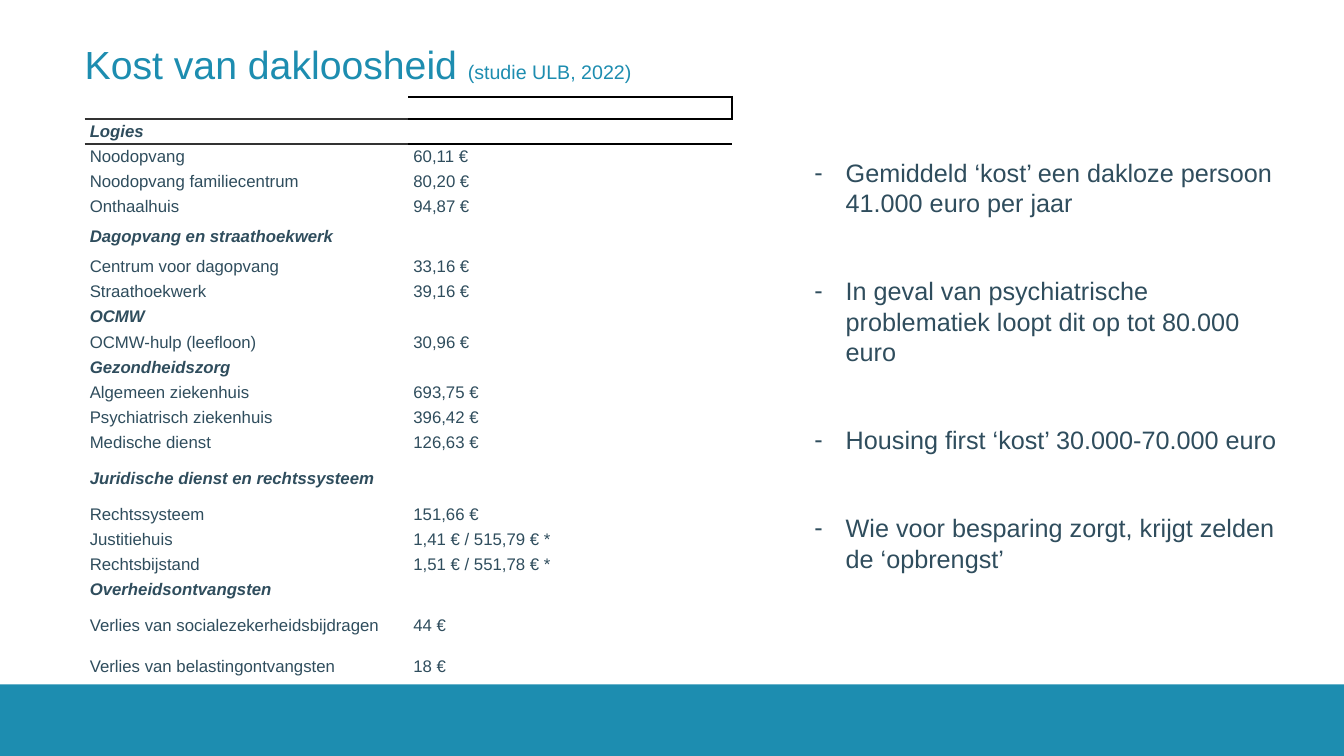
from typing import NamedTuple

from lxml.etree import SubElement as Sub
from pptx import Presentation
from pptx.dml.color import RGBColor as RGB
from pptx.enum.shapes import MSO_SHAPE as Shape
from pptx.enum.text import MSO_ANCHOR as Anchor
from pptx.oxml.ns import qn
from pptx.util import Pt

PX = 9144  # 100 px to the inch
FONT = "Arial"
HEX = {"teal": "1D8DB0", "slate": "2F4D5D", "rule": "333333", "black": "000000"}
PLAIN = "{2D5ABB26-0587-4C30-8999-92F81FD0307C}"  # table style without grid


class Box(NamedTuple):
    x: int
    y: int
    w: int
    h: int

    def emu(self) -> list[int]:
        return [n * PX for n in self]


class Row(NamedTuple):
    label: str
    cost: str = ""  # a row without cost is a heading
    high: int = 25


class Edge(NamedTuple):
    row: int
    col: int
    side: str
    tint: str
    width: float


ROWS = [
    Row("", high=22),
    Row("Logies"),
    Row("Noodopvang", "60,11 €"),
    Row("Noodopvang familiecentrum", "80,20 €"),
    Row("Onthaalhuis", "94,87 €"),
    Row("Dagopvang en straathoekwerk", high=34),
    Row("Centrum voor dagopvang", "33,16 €"),
    Row("Straathoekwerk", "39,16 €"),
    Row("OCMW"),
    Row("OCMW-hulp (leefloon)", "30,96 €"),
    Row("Gezondheidszorg"),
    Row("Algemeen ziekenhuis", "693,75 €"),
    Row("Psychiatrisch ziekenhuis", "396,42 €"),
    Row("Medische dienst", "126,63 €"),
    Row("Juridische dienst en rechtssysteem", high=46),
    Row("Rechtssysteem", "151,66 €"),
    Row("Justitiehuis", "1,41 € / 515,79 € *"),
    Row("Rechtsbijstand", "1,51 € / 551,78 € *"),
    Row("Overheidsontvangsten"),
    Row("Verlies van socialezekerheidsbijdragen", "44 €", 46),
    Row("Verlies van belastingontvangsten", "18 €", 34),
]
EDGES = [
    Edge(0, 0, "B", "rule", 1.5),
    Edge(1, 0, "T", "rule", 1.5),
    Edge(0, 1, "R", "black", 1),
    Edge(0, 1, "T", "black", 1.5),
    Edge(0, 1, "B", "black", 1.5),
    Edge(1, 1, "T", "black", 1.5),
]
POINTS = [
    "Gemiddeld ‘kost’ een dakloze persoon 41.000 euro per jaar",
    "In geval van psychiatrische problematiek loopt dit op tot 80.000 euro",
    "Housing first ‘kost’ 30.000-70.000 euro",
    "Wie voor besparing zorgt, krijgt zelden de ‘opbrengst’",
]


def put(item, **form) -> None:
    for key, val in form.items():
        setattr(item, key, val)


def write(para, text: str, size: float, tint: str, **form) -> None:
    run = para.add_run()
    run.text = text
    put(run.font, name=FONT, size=Pt(size), **form)
    run.font.color.rgb = RGB.from_string(HEX[tint])


def frame(slide, box: Box, **form):
    body = slide.shapes.add_textbox(*box.emu()).text_frame
    put(body, word_wrap=True, **form)
    return body


def rule(cell, edge: Edge) -> None:
    prop = cell._tc.get_or_add_tcPr()
    line = Sub(prop, qn(f"a:ln{edge.side}"), w=str(Pt(edge.width)))
    fill = Sub(line, qn("a:solidFill"))
    Sub(fill, qn("a:srgbClr"), val=HEX[edge.tint])


def band(slide) -> None:
    bar = slide.shapes.add_shape(Shape.RECTANGLE, *Box(0, 679, 1333, 71).emu())
    bar.shadow.inherit = False
    bar.fill.solid()
    bar.fill.fore_color.rgb = RGB.from_string(HEX["teal"])
    bar.line.fill.background()


def costs(slide) -> None:
    area = Box(84, 96, 642, sum(row.high for row in ROWS))
    grid = slide.shapes.add_table(len(ROWS), 2, *area.emu()).table
    put(grid, first_row=False, horz_banding=False)
    grid._tbl.tblPr.find(qn("a:tableStyleId")).text = PLAIN
    # Borders come before the fill in a cell's properties
    for edge in EDGES:
        rule(grid.cell(edge.row, edge.col), edge)
    for at, row in enumerate(ROWS):
        grid.rows[at].height = row.high * PX
        head = not row.cost
        for col, text in enumerate((row.label, row.cost)):
            cell = grid.cell(at, col)
            put(cell, vertical_anchor=Anchor.MIDDLE,
                margin_left=5 * PX, margin_right=5 * PX,
                margin_top=3 * PX, margin_bottom=3 * PX)
            cell.fill.background()
            para = cell.text_frame.paragraphs[0]
            if text:
                write(para, text, 12, "slate", bold=head, italic=head)
            else:  # keeps an empty cell from stretching its row
                Sub(para._p, qn("a:endParaRPr"), sz="900")


def title(slide) -> None:
    body = frame(slide, Box(84, 0, 1165, 126), vertical_anchor=Anchor.MIDDLE,
                 margin_left=0, margin_right=0, margin_top=0, margin_bottom=0)
    para = body.paragraphs[0]
    write(para, "Kost van dakloosheid ", 28, "teal")
    write(para, "(studie ULB, 2022)", 14, "teal")


def points(slide) -> None:
    body = frame(slide, Box(798, 122, 486, 525), margin_top=34 * PX)
    for at, text in enumerate(POINTS):
        para = body.add_paragraph() if at else body.paragraphs[0]
        if at:
            para.space_before = Pt(41.4)
        prop = para._p.get_or_add_pPr()
        prop.set("marL", str(31 * PX))
        prop.set("indent", str(-31 * PX))
        Sub(prop, qn("a:buFont"), typeface=FONT)
        Sub(prop, qn("a:buChar"), char="-")
        write(para, text, 18, "slate")


def main() -> None:
    deck = Presentation()
    put(deck, slide_width=1333 * PX, slide_height=750 * PX)
    slide = deck.slides.add_slide(deck.slide_layouts[6])
    for draw in (band, costs, title, points):
        draw(slide)
    deck.save("out.pptx")


if __name__ == "__main__":
    main()
